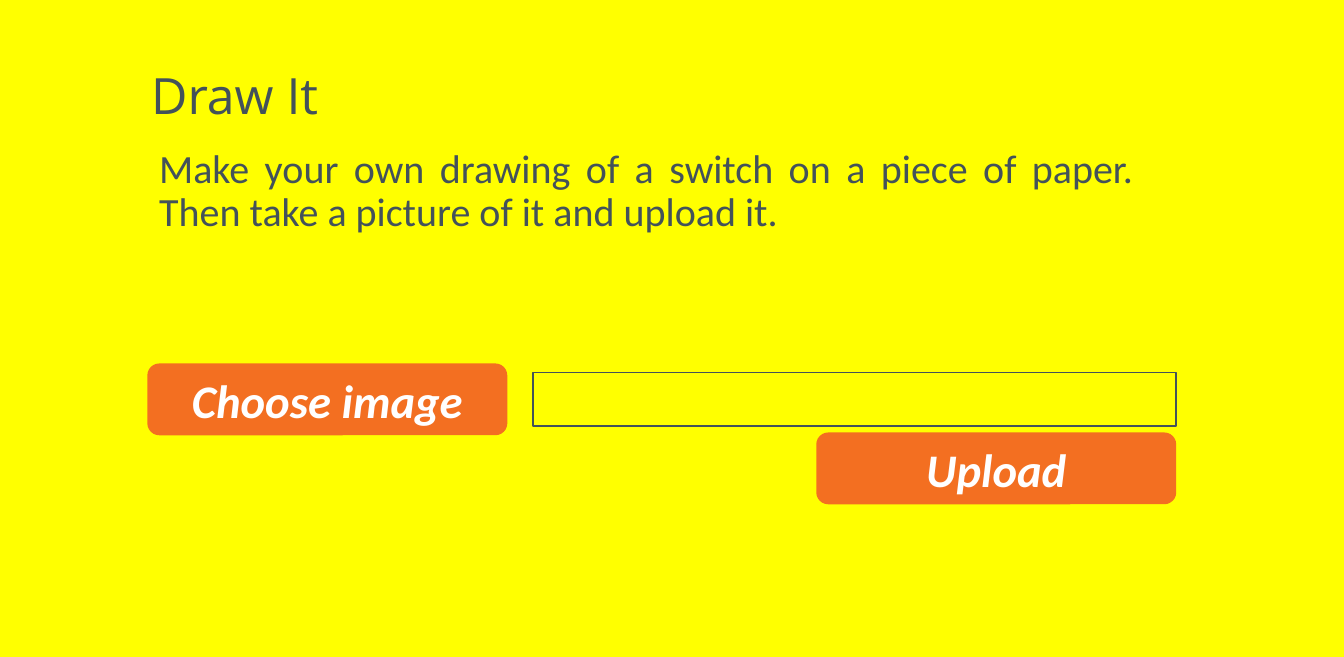
from pptx import Presentation
from pptx import util as u
from pptx.dml.color import RGBColor
from pptx.enum import shapes, text

YELLOW = RGBColor(0xFF, 0xFF, 0x00)
SLATE = RGBColor(0x43, 0x52, 0x5A)
ORANGE = RGBColor(0xF3, 0x6F, 0x21)
WHITE = RGBColor(0xFF, 0xFF, 0xFF)

BUTTON_WIDTH, BUTTON_HEIGHT = u.Cm(7.62), u.Cm(1.52)


def set_text(shape, wording, font_name, size, color, anchor):
    """Write one styled paragraph into a shape and return it."""
    frame = shape.text_frame
    frame.word_wrap = True
    frame.vertical_anchor = anchor
    para = frame.paragraphs[0]
    para.text = wording
    para.font.name = font_name
    para.font.size = u.Pt(size)
    para.font.color.rgb = color
    return para


def add_title(page, left, top, width, height):
    """Place the heading in the given box."""
    box = page.shapes.add_textbox(left, top, width, height)
    para = set_text(box, "Draw It", "Open Sans", 30, SLATE, text.MSO_ANCHOR.MIDDLE)
    para.line_spacing = 0.9


def add_instructions(page, left, top, width, height):
    """Place the justified task description in the given box."""
    box = page.shapes.add_textbox(left, top, width, height)
    wording = ("Make your own drawing of a switch on a piece of paper. "
               "Then take a picture of it and upload it.")
    para = set_text(box, wording, "Calibri", 24, SLATE, text.MSO_ANCHOR.TOP)
    para.alignment = text.PP_ALIGN.JUSTIFY
    para.line_spacing = 0.9
    para.space_before = u.Pt(7.3)


def add_button(page, label, left, top):
    """Add a rounded orange button with an italic label."""
    button = page.shapes.add_shape(
        shapes.MSO_SHAPE.ROUNDED_RECTANGLE, left, top, BUTTON_WIDTH, BUTTON_HEIGHT)
    button.shadow.inherit = False
    button.fill.solid()
    button.fill.fore_color.rgb = ORANGE
    button.line.fill.background()
    para = set_text(button, label, "Calibri", 28, WHITE, text.MSO_ANCHOR.MIDDLE)
    para.alignment = text.PP_ALIGN.CENTER
    para.font.bold = True
    para.font.italic = True


def add_upload_form(page, left, top, width, height):
    """Place the chooser, its file field and the upload button in the given box."""
    add_button(page, "Choose image", left, top)
    field_offset = BUTTON_WIDTH + u.Cm(0.54)
    field_height = u.Cm(1.14)
    field = page.shapes.add_shape(
        shapes.MSO_SHAPE.RECTANGLE, left + field_offset,
        top + (BUTTON_HEIGHT - field_height) // 2, width - field_offset, field_height)
    field.shadow.inherit = False
    field.fill.background()
    field.line.color.rgb = SLATE
    field.line.width = u.Pt(1)
    add_button(page, "Upload", left + width - BUTTON_WIDTH, top + height - BUTTON_HEIGHT)


def main():
    """Build the slide and save the deck."""
    deck = Presentation()
    deck.slide_width, deck.slide_height = u.Cm(28.45), u.Cm(13.9)
    page = deck.slides.add_slide(deck.slide_layouts[6])
    page.background.fill.solid()
    page.background.fill.fore_color.rgb = YELLOW
    add_title(page, u.Cm(2.95), u.Cm(0.74), u.Cm(21.31), u.Cm(2.69))
    add_instructions(page, u.Cm(3.12), u.Cm(3.03), u.Cm(21.13), u.Cm(2.36))
    add_upload_form(page, u.Cm(3.12), u.Cm(7.69), u.Cm(21.78), u.Cm(2.98))
    deck.save("out.pptx")


if __name__ == "__main__":
    main()
